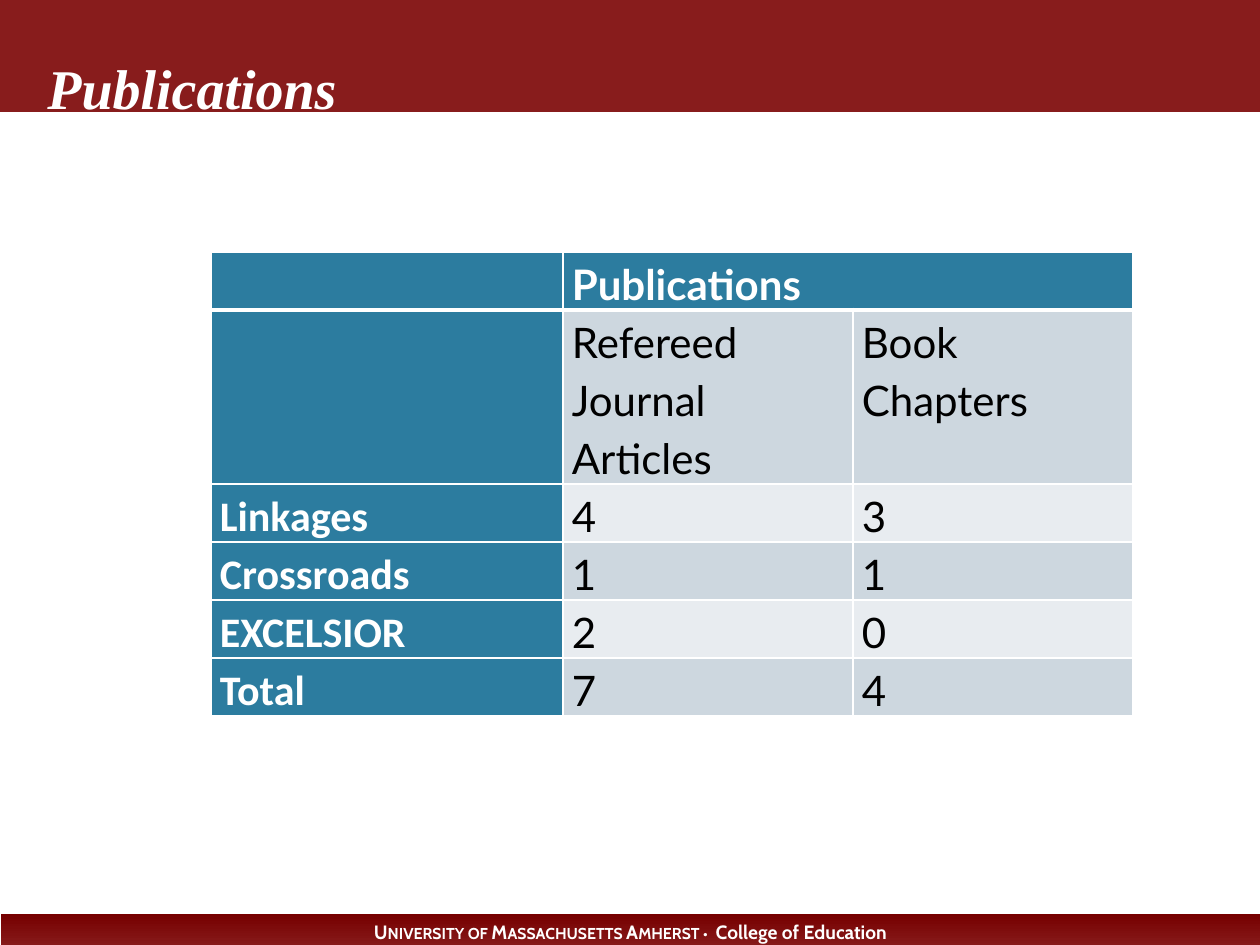
from dataclasses import dataclass

from lxml import etree
from pptx import Presentation
from pptx.dml.color import RGBColor
from pptx.enum.shapes import MSO_SHAPE
from pptx.enum.text import MSO_ANCHOR, PP_ALIGN
from pptx.oxml.ns import qn
from pptx.util import Emu, Pt

RECT = MSO_SHAPE.RECTANGLE
TOP, BOTTOM = MSO_ANCHOR.TOP, MSO_ANCHOR.BOTTOM
CENTER = PP_ALIGN.CENTER
PX = 914400 // 126


@dataclass(frozen=True)
class Theme:
    maroon: str = "881C1C"
    dark_maroon: str = "760000"
    white: str = "FFFFFF"
    black: str = "000000"
    teal: str = "2C7C9F"
    bands: tuple = ("CDD7DF", "E8ECF0")
    title_font: str = "Times New Roman"
    footer_font: str = "Cabin"
    body_font: str = "Lato"
    label_font: str = "Calibri"
    title_size: int = 32
    table_size: int = 24
    capital_size: int = 11
    small_cap_size: int = 9


THEME = Theme()

TITLE = "Publications"
FOOTER = [
    ("U", THEME.capital_size), ("NIVERSITY OF ", THEME.small_cap_size),
    ("M", THEME.capital_size), ("ASSACHUSETTS ", THEME.small_cap_size),
    ("A", THEME.capital_size), ("MHERST • ", THEME.small_cap_size),
    (" College of Education", THEME.capital_size),
]
TABLE = [
    ("", "Publications", ""),
    ("", "Refereed Journal Articles", "Book Chapters"),
    ("Linkages", "4", "3"),
    ("Crossroads", "1", "1"),
    ("EXCELSIOR", "2", "0"),
    ("Total", "7", "4"),
]
TABLE_LEFT, TABLE_TOP = 211, 252
COLUMN_WIDTHS = (352, 290, 280)
LINE_HEIGHT = 58
ROW_LINES = (1, 3, 1, 1, 1, 1)


def px(*values):
    return [Emu(v * PX) for v in values]


def color(name):
    return RGBColor.from_string(name)


def style(run, font, size, fill, bold=True, italic=False):
    f = run.font
    f.name, f.size, f.bold, f.italic = font, Pt(size), bold, italic
    f.color.rgb = color(fill)


def add_bar(slide, *box):
    sp = slide.shapes.add_shape(RECT, *px(*box))
    sp.shadow.inherit = False
    sp.line.fill.background()
    return sp


def add_footer(slide):
    sp = add_bar(slide, 1, 914, 1259, 34)
    sp.fill.gradient()
    sp.fill.gradient_angle = 270
    for stop, name in zip(sp.fill.gradient_stops, (THEME.dark_maroon, THEME.maroon)):
        stop.color.rgb = color(name)
    tf = sp.text_frame
    tf.vertical_anchor = TOP
    p = tf.paragraphs[0]
    p.alignment = CENTER
    for text, size in FOOTER:
        r = p.add_run()
        r.text = text
        style(r, THEME.footer_font, size, THEME.white)


def add_title(slide):
    sp = add_bar(slide, 0, 0, 1260, 112)
    sp.fill.solid()
    sp.fill.fore_color.rgb = color(THEME.maroon)
    tf = slide.shapes.add_textbox(*px(35, 15, 1050, 112)).text_frame
    tf.word_wrap = True
    tf.vertical_anchor = BOTTOM
    tf.text = TITLE
    style(tf.paragraphs[0].runs[0], THEME.title_font, THEME.title_size,
          THEME.white, italic=True)


def set_borders(cell, top, bottom):
    """Draw white borders, with the top and bottom widths in points."""
    tc_pr = cell._tc.get_or_add_tcPr()
    sides = (("lnL", 1), ("lnR", 1), ("lnT", top), ("lnB", bottom))
    for i, (tag, width) in enumerate(sides):
        ln = etree.Element(qn(f"a:{tag}"), w=str(Pt(width)))
        fill = etree.SubElement(ln, qn("a:solidFill"))
        etree.SubElement(fill, qn("a:srgbClr"), val=THEME.white)
        tc_pr.insert(i, ln)


def fill_cell(cell, text, row, col):
    heading = row == 0 or col == 0
    cell.fill.solid()
    cell.fill.fore_color.rgb = color(
        THEME.teal if heading else THEME.bands[(row - 1) % 2])
    set_borders(cell, 3 if row == 1 else 1, 3 if row == 0 else 1)
    cell.margin_left, cell.margin_right = px(9, 9)
    cell.margin_top = cell.margin_bottom = 0
    if text:
        cell.text_frame.text = text
        p = cell.text_frame.paragraphs[0]
        p.line_spacing = 1.15
        style(p.runs[0], THEME.body_font if col else THEME.label_font,
              THEME.table_size, THEME.white if heading else THEME.black, heading)


def add_publications_table(slide):
    heights = [n * LINE_HEIGHT for n in ROW_LINES]
    table = slide.shapes.add_table(
        len(TABLE), len(COLUMN_WIDTHS),
        *px(TABLE_LEFT, TABLE_TOP, sum(COLUMN_WIDTHS), sum(heights))).table
    for column, width in zip(table.columns, px(*COLUMN_WIDTHS)):
        column.width = width
    for row, height in zip(table.rows, px(*heights)):
        row.height = height
    for r, texts in enumerate(TABLE):
        for c, text in enumerate(texts):
            fill_cell(table.cell(r, c), text, r, c)
    table.cell(0, 1).merge(table.cell(0, 2))


def main():
    prs = Presentation()
    prs.slide_width, prs.slide_height = px(1260, 945)
    slide = prs.slides.add_slide(prs.slide_layouts[6])
    add_footer(slide)
    add_title(slide)
    add_publications_table(slide)
    prs.save("out.pptx")


if __name__ == "__main__":
    main()
